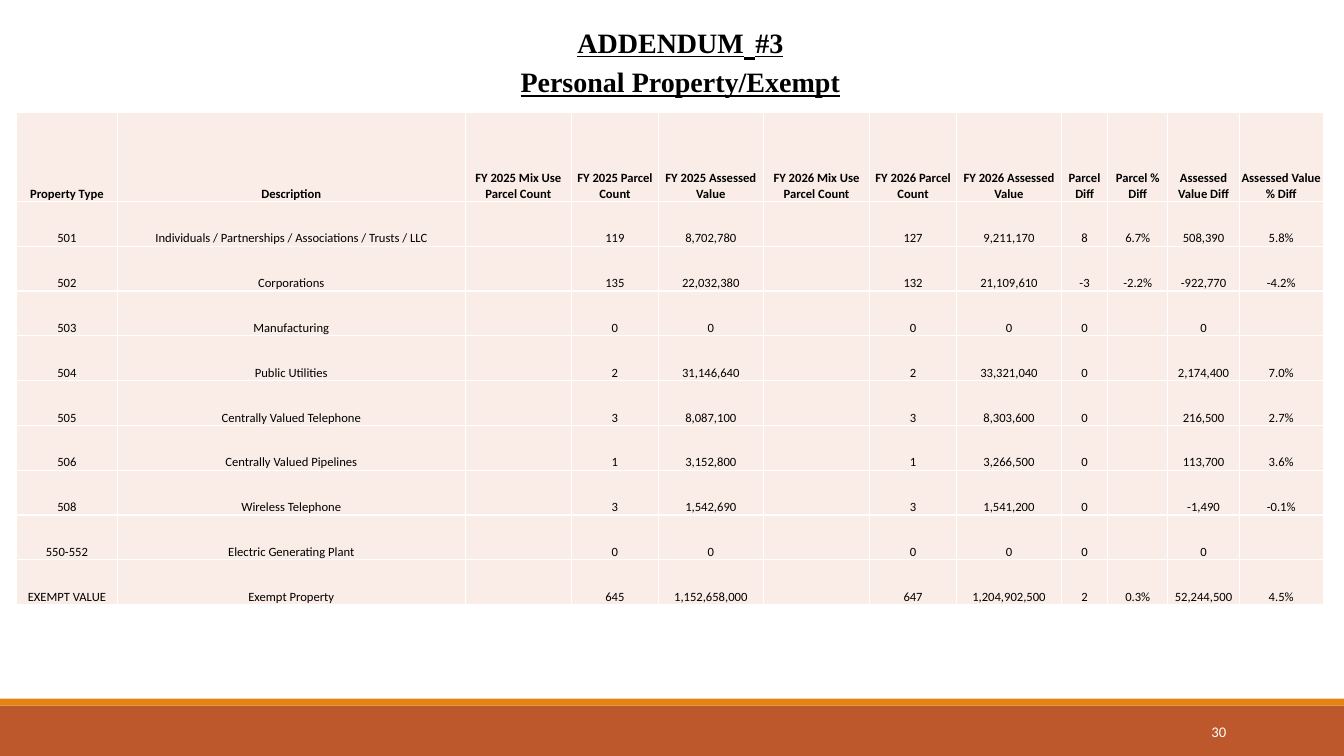
import pptx
import pptx.util
import pptx.dml.color
import pptx.enum.shapes
import pptx.enum.text
import pptx.oxml
import pptx.oxml.ns

Pt = pptx.util.Pt
RGBColor = pptx.dml.color.RGBColor
ALIGN = pptx.enum.text.PP_ALIGN
ANCHOR = pptx.enum.text.MSO_ANCHOR
FIT = pptx.enum.text.MSO_AUTO_SIZE

RUST = RGBColor(0xBD, 0x58, 0x2C)
AMBER = RGBColor(0xE4, 0x83, 0x12)
BLUSH = RGBColor(0xFA, 0xED, 0xE7)
WHITE = RGBColor(0xFF, 0xFF, 0xFF)
BLACK = RGBColor(0, 0, 0)

WIDE, HIGH = 960, 540

TITLE = {"name": "Times New Roman", "size": Pt(20), "bold": True, "underline": True}
GAP = {**TITLE, "size": Pt(32), "bold": False}
HEAD = {"name": "Calibri", "size": Pt(9), "bold": True}
BODY = {**HEAD, "bold": False}
PAGE = {"name": "Calibri", "size": Pt(10.5)}
CELL = {
    "margin_left": Pt(0.7), "margin_right": Pt(0.7),
    "margin_top": Pt(0.7), "margin_bottom": 0,
    "vertical_anchor": ANCHOR.BOTTOM,
}

# Column heading and width
COLS = [
    ("Property Type", 72), ("Description", 248.5),
    ("FY 2025 Mix Use Parcel Count", 76), ("FY 2025 Parcel Count", 62),
    ("FY 2025 Assessed Value", 75),
    ("FY 2026 Mix Use Parcel Count", 76), ("FY 2026 Parcel Count", 62),
    ("FY 2026 Assessed Value", 75),
    ("Parcel Diff", 33), ("Parcel % Diff", 43),
    ("Assessed Value Diff", 51), ("Assessed Value % Diff", 60),
]
ROWS = [
    ("501", "Individuals / Partnerships / Associations / Trusts / LLC", "",
     "119", "8,702,780", "", "127", "9,211,170", "8", "6.7%", "508,390", "5.8%"),
    ("502", "Corporations", "",
     "135", "22,032,380", "", "132", "21,109,610", "-3", "-2.2%", "-922,770", "-4.2%"),
    ("503", "Manufacturing", "", "0", "0", "", "0", "0", "0", "", "0", ""),
    ("504", "Public Utilities", "",
     "2", "31,146,640", "", "2", "33,321,040", "0", "", "2,174,400", "7.0%"),
    ("505", "Centrally Valued Telephone", "",
     "3", "8,087,100", "", "3", "8,303,600", "0", "", "216,500", "2.7%"),
    ("506", "Centrally Valued Pipelines", "",
     "1", "3,152,800", "", "1", "3,266,500", "0", "", "113,700", "3.6%"),
    ("508", "Wireless Telephone", "",
     "3", "1,542,690", "", "3", "1,541,200", "0", "", "-1,490", "-0.1%"),
    ("550-552", "Electric Generating Plant", "",
     "0", "0", "", "0", "0", "0", "", "0", ""),
    ("EXEMPT VALUE", "Exempt Property", "",
     "645", "1,152,658,000", "", "647", "1,204,902,500", "2", "0.3%",
     "52,244,500", "4.5%"),
]
ROW = 32


def put(thing, form):
    for key, value in form.items():
        setattr(thing, key, value)


def write(para, text, form, color, align):
    para.alignment = align
    run = para.add_run()
    run.text = text
    put(run.font, form)
    run.font.color.rgb = color


def bar(slide, top, high, color):
    shape = slide.shapes.add_shape(
        pptx.enum.shapes.MSO_SHAPE.RECTANGLE, 0, Pt(top), Pt(WIDE), Pt(high))
    shape.shadow.inherit = False
    shape.fill.solid()
    shape.fill.fore_color.rgb = color
    shape.line.fill.background()


def title(slide):
    shape = slide.shapes.title
    put(shape, {"left": Pt(343), "top": 0, "width": Pt(286), "height": Pt(70.5)})
    frame = shape.text_frame
    put(frame, {"word_wrap": True, "vertical_anchor": ANCHOR.TOP,
                "auto_size": FIT.SHAPE_TO_FIT_TEXT})
    first, second = frame.paragraphs[0], frame.add_paragraph()
    for text, form in (("ADDENDUM", TITLE), (" ", GAP), ("#3", TITLE)):
        write(first, text, form, BLACK, ALIGN.CENTER)
    write(second, "Personal Property/Exempt", TITLE, BLACK, ALIGN.CENTER)
    for para in frame.paragraphs:
        para.line_spacing = 1.07


def number(slide):
    box = slide.shapes.add_textbox(Pt(780), Pt(508), Pt(103), Pt(29))
    frame = box.text_frame
    put(frame, {"word_wrap": True, "vertical_anchor": ANCHOR.MIDDLE})
    write(frame.paragraphs[0], "30", PAGE, WHITE, ALIGN.RIGHT)


def edge(cell):
    # Borders come before the fill in the cell properties
    props = cell._tc.get_or_add_tcPr()
    for place, side in enumerate(("lnL", "lnR", "lnT", "lnB")):
        props.insert(place, pptx.oxml.parse_xml(
            f'<a:{side} {pptx.oxml.ns.nsdecls("a")} w="{Pt(1)}"><a:solidFill>'
            f'<a:srgbClr val="{WHITE}"/></a:solidFill></a:{side}>'))


def grid(slide):
    wide = sum(width for _, width in COLS)
    lines = [[name for name, _ in COLS], *ROWS]
    table = slide.shapes.add_table(
        len(lines), len(COLS), Pt(11.75), Pt(80), Pt(wide),
        Pt(ROW * (len(lines) + 1))).table
    put(table, {"first_row": False, "horz_banding": False})
    for col, (_, width) in zip(table.columns, COLS):
        col.width = Pt(width)
    for r, line in enumerate(lines):
        table.rows[r].height = Pt(ROW if r else 2 * ROW)
        for c, text in enumerate(line):
            cell = table.cell(r, c)
            put(cell, CELL)
            cell.fill.solid()
            cell.fill.fore_color.rgb = BLUSH
            edge(cell)
            if text:
                write(cell.text_frame.paragraphs[0], text,
                      BODY if r else HEAD, BLACK, ALIGN.CENTER)


def main():
    deck = pptx.Presentation()
    put(deck, {"slide_width": Pt(WIDE), "slide_height": Pt(HIGH)})
    slide = deck.slides.add_slide(deck.slide_layouts[5])
    # Footer bars and page number
    bar(slide, 504, 36, RUST)
    bar(slide, 499, 5, AMBER)
    number(slide)
    # Heading and table
    title(slide)
    grid(slide)
    deck.save("out.pptx")


if __name__ == "__main__":
    main()
